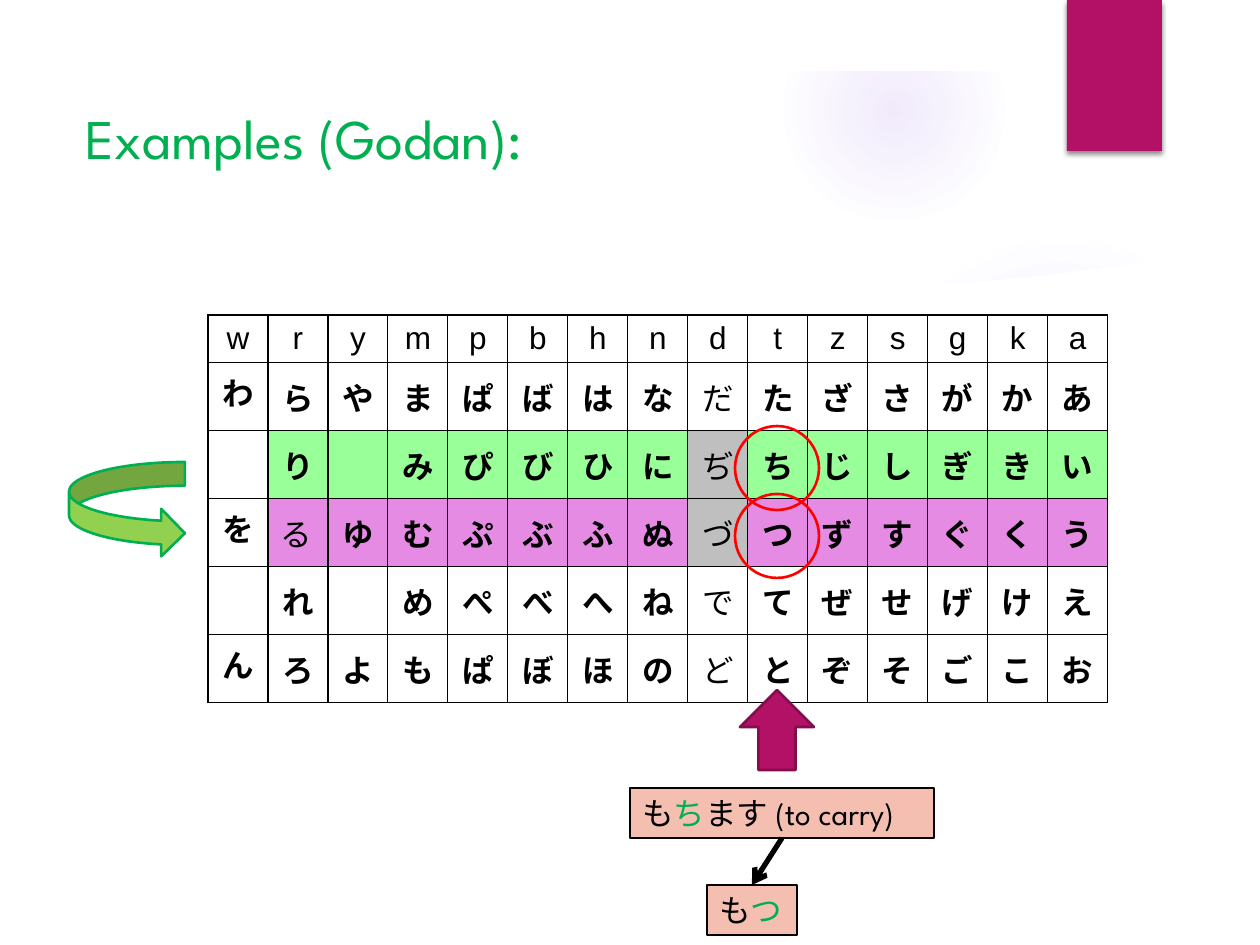
from dataclasses import dataclass

from lxml import etree
from pptx import Presentation, util as u
from pptx.dml.color import RGBColor
from pptx.enum import shapes, text
from pptx.oxml import parse_xml
from pptx.oxml.ns import nsdecls, qn

SCALE = 914400 / 126


@dataclass(frozen=True)
class Theme:
    accent: str = "B31166"
    accent_dark: str = "840D4B"
    glow: str = "9B6BF2"
    green: str = "00B050"
    lime: str = "92D050"
    red: str = "FF0000"
    peach: str = "F4BFB1"
    i_row: str = "99FF99"
    u_row: str = "E68BE3"
    unused: str = "BFBFBF"
    black: str = "000000"
    white: str = "FFFFFF"
    main_font: str = "League Spartan"
    head_font: str = "Arial"
    kana_font: str = "Comic Neue"
    title_size: int = 32
    text_size: int = 18


T = Theme()
BLANK = "-"
KANA_ROWS = [
    "wrympbhndtzsgka",
    "わらやまぱばはなだたざさがかあ",
    "-り-みぴびひにぢちじしぎきい",
    "をるゆむぷぶふぬづつずすぐくう",
    "-れ-めぺべへねでてぜせげけえ",
    "んろよもぱぼほのどとぞそごこお",
]
D_COLUMN = 8
ROW_FILLS = {2: T.i_row, 3: T.u_row}
PANEL_EDGE = [(1142, 263), (1040, 276), (937, 286), (887, 289), (787, 293), (691, 295),
              (597, 295), (467, 291), (349, 282), (218, 268)]


def px(n):
    return u.Emu(round(n * SCALE))


def rgb(colour):
    return RGBColor.from_string(colour)


def add_run(p, words, font=T.main_font, size=T.text_size, colour=T.black, bold=False):
    r = p.add_run()
    r.text = words
    r.font.name, r.font.size, r.font.bold = font, u.Pt(size), bold
    r.font.color.rgb = rgb(colour)


def paint(sp, fill=None, line=None, width=1.5):
    sp.shadow.inherit = False
    if fill:
        sp.fill.solid()
        sp.fill.fore_color.rgb = rgb(fill)
    else:
        sp.fill.background()
    if line:
        sp.line.color.rgb = rgb(line)
        sp.line.width = u.Pt(width)
    else:
        sp.line.fill.background()
    return sp


def add_shape(s, kind, box, **look):
    return paint(s.shapes.add_shape(kind, *map(px, box)), **look)


def add_glow(s, box, stops):
    """Circle fading out; stops are (position, opacity) in percent."""
    sp = add_shape(s, shapes.MSO_SHAPE.OVAL, box)
    stop_xml = "".join(
        f'<a:gs pos="{pos * 1000}"><a:srgbClr val="{T.glow}"><a:alpha val="{alpha * 1000}"/>'
        f'</a:srgbClr></a:gs>' for pos, alpha in stops)
    gradient = parse_xml(
        f'<a:gradFill {nsdecls("a")} rotWithShape="1"><a:gsLst>{stop_xml}</a:gsLst>'
        '<a:path path="circle"><a:fillToRect l="50000" t="50000" r="50000" b="50000"/></a:path>'
        '</a:gradFill>')
    sppr = sp.element.spPr
    sppr.replace(sppr.find(qn("a:noFill")), gradient)


def add_backdrop(s, w, h):
    add_glow(s, (868, 231, 388, 388), [(0, 7), (36, 6), (69, 0)])
    add_glow(s, (784, 0, 220, 220), [(0, 14), (36, 7), (73, 0)])
    left, right, top, bottom = 67, w - 67, 256, h - 64
    builder = s.shapes.build_freeform(left, top, scale=SCALE)
    builder.add_line_segments([(left, bottom), (right, bottom), (right, top)] + PANEL_EDGE)
    paint(builder.convert_to_shape(), fill=T.white)
    frame = add_shape(s, shapes.MSO_SHAPE.FRAME, (0, 0, w, h), fill=T.white)
    frame.adjustments[0] = 0.075


def add_corner_tab(s, box):
    sp = add_shape(s, shapes.MSO_SHAPE.RECTANGLE, box, fill=T.accent)
    shadow = etree.SubElement(sp.element.spPr.find(qn("a:effectLst")), qn("a:outerShdw"),
                              blurRad="38100", dist="25400", dir="5400000", rotWithShape="0")
    colour = etree.SubElement(shadow, qn("a:srgbClr"), val=T.black)
    etree.SubElement(colour, qn("a:alpha"), val="45000")


def add_title(s, box, words):
    title = s.shapes.title
    title.left, title.top, title.width, title.height = map(px, box)
    title.element.getparent().append(title.element)
    tf = title.text_frame
    tf.vertical_anchor = text.MSO_ANCHOR.MIDDLE
    p = tf.paragraphs[0]
    p.alignment = text.PP_ALIGN.LEFT
    add_run(p, words, size=T.title_size, colour=T.green)


def add_borders(cell, width=0.75):
    tcpr = cell._tc.get_or_add_tcPr()
    for side in "LRTB":
        tcpr.append(parse_xml(
            f'<a:ln{side} {nsdecls("a")} w="{u.Pt(width)}"><a:solidFill>'
            f'<a:srgbClr val="{T.black}"/></a:solidFill></a:ln{side}>'))


def cell_fill(row, col):
    if row not in ROW_FILLS or col == 0:
        return T.white
    return T.unused if col == D_COLUMN else ROW_FILLS[row]


def kana_format(row, col, kana):
    if kana == "る":
        return dict(font=T.main_font)
    if row == 0 or col == D_COLUMN:
        return dict(font=T.head_font)
    return dict(font=T.kana_font, bold=True)


def add_kana_table(s, box, head_height):
    rows, cols = len(KANA_ROWS), len(KANA_ROWS[0])
    table = s.shapes.add_table(rows, cols, *map(px, box)).table
    table.first_row = table.horz_banding = False
    for column in table.columns:
        column.width = px(box[2] / cols)
    for i, kana_row in enumerate(KANA_ROWS):
        table.rows[i].height = px((box[3] - head_height) / (rows - 1) if i else head_height)
        for j, kana in enumerate(kana_row):
            cell = table.cell(i, j)
            add_borders(cell)
            cell.fill.solid()
            cell.fill.fore_color.rgb = rgb(cell_fill(i, j))
            cell.vertical_anchor = text.MSO_ANCHOR.MIDDLE if j else text.MSO_ANCHOR.TOP
            p = cell.text_frame.paragraphs[0]
            p.alignment = text.PP_ALIGN.LEFT if kana == "る" else text.PP_ALIGN.CENTER
            if kana != BLANK:
                add_run(p, kana, **kana_format(i, j, kana))


def add_word_box(s, box, parts):
    """Rectangle holding (text, colour) parts on one line."""
    sp = add_shape(s, shapes.MSO_SHAPE.RECTANGLE, box, fill=T.peach, line=T.black, width=0.75)
    tf = sp.text_frame
    tf.word_wrap = False
    tf.auto_size = text.MSO_AUTO_SIZE.SHAPE_TO_FIT_TEXT
    tf.vertical_anchor = text.MSO_ANCHOR.TOP
    p = tf.paragraphs[0]
    p.alignment = text.PP_ALIGN.LEFT
    for words, colour in parts:
        add_run(p, words, colour=colour)
    return sp


def add_arrow(s, upper, lower):
    line = s.shapes.add_connector(shapes.MSO_CONNECTOR.STRAIGHT, 0, 0, 0, 0)
    line.begin_connect(upper, 2)
    line.end_connect(lower, 0)
    line.line.color.rgb = rgb(T.black)
    line.line.width = u.Pt(3)
    etree.SubElement(line.line._get_or_add_ln(), qn("a:tailEnd"), type="arrow")
    etree.SubElement(line.element.spPr, qn("a:effectLst"))


def add_marks(s):
    kind = shapes.MSO_SHAPE
    add_shape(s, kind.CURVED_RIGHT_ARROW, (69, 462, 116, 95), fill=T.lime, line=T.green)
    for top in (426, 494):
        add_shape(s, kind.OVAL, (735, top, 84, 84), line=T.red)
    add_shape(s, kind.UP_ARROW, (740, 690, 74, 80), fill=T.accent, line=T.accent_dark)


def add_example(s):
    polite = add_word_box(s, (630, 788, 304, 50),
                          [("も", T.black), ("ち", T.green), ("ます (to carry)", T.black)])
    plain = add_word_box(s, (707, 885, 90, 50), [("も", T.black), ("つ", T.green)])
    add_arrow(s, polite, plain)


def main():
    prs = Presentation()
    w, h = 1260, 945
    prs.slide_width, prs.slide_height = px(w), px(h)
    s = prs.slides.add_slide(prs.slide_layouts[5])
    add_backdrop(s, w, h)
    add_corner_tab(s, (1067, 0, 95, 151))
    add_title(s, (73, 69, 1134, 136), "Examples (Godan):")
    add_kana_table(s, (208, 315, 900, 387), head_height=47)
    add_marks(s)
    add_example(s)
    prs.save("out.pptx")


if __name__ == "__main__":
    main()
